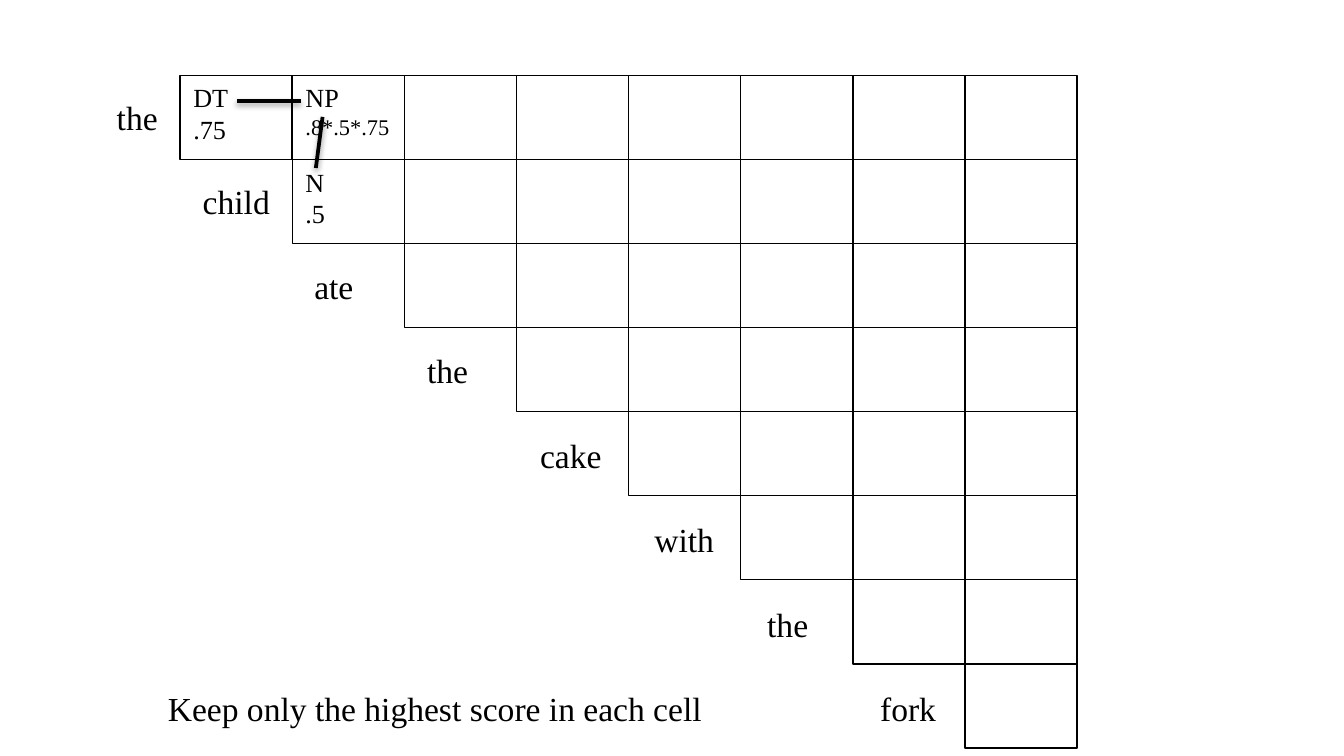
from dataclasses import dataclass
from typing import NamedTuple

from lxml import etree
from pptx import Presentation
from pptx.dml.color import RGBColor
from pptx.enum.shapes import MSO_CONNECTOR, MSO_SHAPE
from pptx.enum.text import MSO_ANCHOR, MSO_AUTO_SIZE, PP_ALIGN
from pptx.oxml.ns import qn
from pptx.slide import Slide
from pptx.util import Inches, Pt

RECTANGLE = MSO_SHAPE.RECTANGLE
STRAIGHT = MSO_CONNECTOR.STRAIGHT
TOP = MSO_ANCHOR.TOP
LEFT = PP_ALIGN.LEFT
FIT_SHAPE = MSO_AUTO_SIZE.SHAPE_TO_FIT_TEXT


@dataclass(frozen=True)
class Theme:
    font: str = "Times New Roman"
    ink: RGBColor = RGBColor(0x00, 0x00, 0x00)
    label_size: float = 18
    symbol_size: float = 14
    formula_size: float = 12
    cell_line: float = 0.75
    link_line: float = 2


class Label(NamedTuple):
    text: str
    left: float
    width: float


class Entry(NamedTuple):
    symbol: str
    score: str
    score_size: float


class Link(NamedTuple):
    x1: float
    y1: float
    x2: float
    y2: float


THEME = Theme()
PAGE_WIDTH = 10
PAGE_HEIGHT = PAGE_WIDTH * 9 / 16
CHART_LEFT, CHART_TOP = 1.34, 0.56
CELL_WIDTH = 5.84 / 7
CELL_HEIGHT = 4.38 / 7
LABEL_TOP, LABEL_HEIGHT = 0.67, 0.4
LABEL_STEP = 4.4 / 7

WORDS = [
    Label("the", 0.77, 0.51),
    Label("child", 1.41, 0.71),
    Label("ate", 2.24, 0.5),
    Label("the", 3.08, 0.51),
    Label("cake", 3.92, 0.66),
    Label("with", 4.77, 0.65),
    Label("the", 5.61, 0.51),
    Label("fork", 6.45, 0.62),
]
RULE = Label("Keep only the highest score in each cell", 1.15, 4.22)
ENTRIES = {
    (0, 0): Entry("DT", ".75", THEME.symbol_size),
    (0, 1): Entry("NP", ".8*.5*.75", THEME.formula_size),
    (1, 1): Entry("N", ".5", THEME.symbol_size),
}
LINKS = [Link(2.24, 0.75, 1.76, 0.75), Link(2.4, 0.87, 2.35, 1.25)]


def style_paragraph(para, size: float) -> None:
    para.alignment = LEFT
    for span in para.runs:
        span.font.name = THEME.font
        span.font.size = Pt(size)
        span.font.color.rgb = THEME.ink


def draw_cell(page: Slide, row: int, column: int) -> None:
    box = page.shapes.add_shape(
        RECTANGLE,
        Inches(CHART_LEFT + column * CELL_WIDTH),
        Inches(CHART_TOP + row * CELL_HEIGHT),
        Inches(CELL_WIDTH),
        Inches(CELL_HEIGHT),
    )
    box.shadow.inherit = False
    box.fill.background()
    box.line.color.rgb = THEME.ink
    box.line.width = Pt(THEME.cell_line)
    entry = ENTRIES.get((row, column))
    if entry:
        frame = box.text_frame
        frame.vertical_anchor = TOP
        frame.text = f"{entry.symbol}\n{entry.score}"
        sizes = (THEME.symbol_size, entry.score_size)
        for para, size in zip(frame.paragraphs, sizes):
            style_paragraph(para, size)


def draw_label(page: Slide, label: Label, row: int) -> None:
    box = page.shapes.add_textbox(
        Inches(label.left),
        Inches(LABEL_TOP + row * LABEL_STEP),
        Inches(label.width),
        Inches(LABEL_HEIGHT),
    )
    frame = box.text_frame
    frame.word_wrap = False
    frame.auto_size = FIT_SHAPE
    frame.text = label.text
    style_paragraph(frame.paragraphs[0], THEME.label_size)


def draw_link(page: Slide, link: Link) -> None:
    line = page.shapes.add_connector(STRAIGHT, *(Inches(value) for value in link))
    line.line.color.rgb = THEME.ink
    line.line.width = Pt(THEME.link_line)
    effects = etree.SubElement(line._element.spPr, qn("a:effectLst"))
    shadow = etree.SubElement(
        effects,
        qn("a:outerShdw"),
        blurRad=str(Pt(3.1)),
        dist=str(Pt(1.6)),
        dir="5400000",
        rotWithShape="0",
    )
    color = etree.SubElement(shadow, qn("a:srgbClr"), val=str(THEME.ink))
    etree.SubElement(color, qn("a:alpha"), val="38000")


def main() -> None:
    deck = Presentation()
    deck.slide_width = Inches(PAGE_WIDTH)
    deck.slide_height = Inches(PAGE_HEIGHT)
    page = deck.slides.add_slide(deck.slide_layouts[6])
    for row in range(len(WORDS)):
        for column in range(row, len(WORDS)):
            draw_cell(page, row, column)
    for row, word in enumerate(WORDS):
        draw_label(page, word, row)
    for link in LINKS:
        draw_link(page, link)
    draw_label(page, RULE, len(WORDS) - 1)
    deck.save("out.pptx")


if __name__ == "__main__":
    main()
